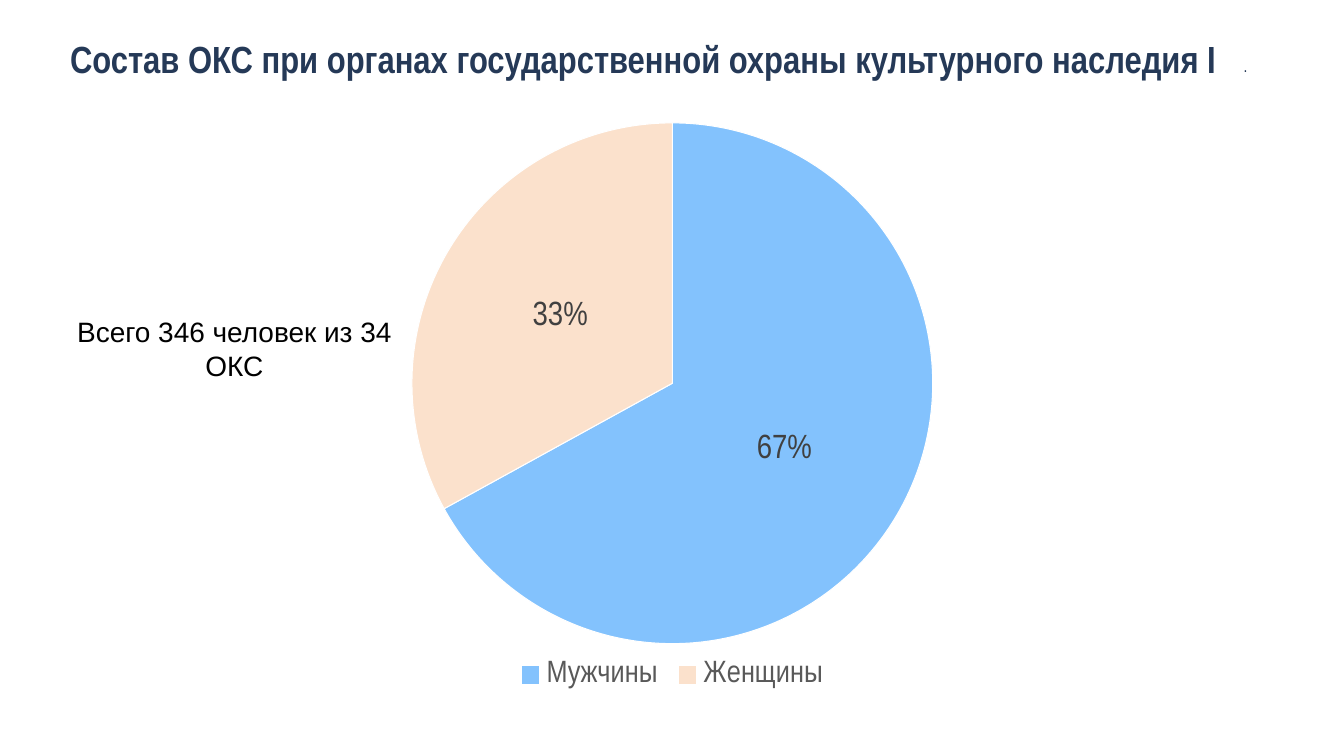
import pptx
import pptx.util
import pptx.chart.data
import pptx.dml.color
import pptx.enum.chart
import pptx.enum.text

Pt = pptx.util.Pt
ANCHOR = pptx.enum.text.MSO_ANCHOR
ALIGN = pptx.enum.text.PP_ALIGN

# Content
NARROW = "Arial Narrow"
NAVY = "253957"
TEXTS = [
    dict(text="Состав ОКС при органах государственной охраны культурного наследия I",
         box=(94.3, 46.8, 1784.2, 147.6), insets=(5.76, 0, 5.76, 91),
         size=54, font=NARROW, color=NAVY, bold=True,
         anchor=ANCHOR.BOTTOM, align=ALIGN.LEFT),
    dict(text=".",
         box=(892.8, 74.2, 895, 40.3), insets=(5.76, 5.76, 5.76, 5.76),
         size=24, font=NARROW, color=NAVY, bold=False,
         anchor=ANCHOR.MIDDLE, align=ALIGN.RIGHT),
    dict(text="Всего 346 человек из 34 ОКС",
         box=(95, 445.7, 479.5, 104.4), insets=(7.2, 3.6, 7.2, 3.6),
         size=40, font="Arial", color="000000", bold=False,
         anchor=ANCHOR.TOP, align=ALIGN.CENTER),
]
CHART_BOX = (328.3, 165.6, 1264.3, 828)
SLICES = [("Мужчины", 67, "83C2FD"), ("Женщины", 33, "FBE1CC")]


def rgb(value):
    return pptx.dml.color.RGBColor.from_string(value)


def set_font(font, name, size, color, bold=False):
    font.name, font.size, font.bold = name, Pt(size), bold
    font.color.rgb = rgb(color)


def add_text(slide, item):
    sp = slide.shapes.add_textbox(*map(Pt, item["box"]))
    tf = sp.text_frame
    tf.word_wrap = True
    tf.vertical_anchor = item["anchor"]
    tf.margin_left, tf.margin_top, tf.margin_right, tf.margin_bottom = map(Pt, item["insets"])
    tf.text = item["text"]
    p = tf.paragraphs[0]
    p.alignment = item["align"]
    set_font(p.runs[0].font, item["font"], item["size"], item["color"], item["bold"])


def add_pie(slide):
    data = pptx.chart.data.CategoryChartData()
    data.categories = [name for name, _, _ in SLICES]
    data.add_series("Series 1", [value for _, value, _ in SLICES])
    chart = slide.shapes.add_chart(
        pptx.enum.chart.XL_CHART_TYPE.PIE, *map(Pt, CHART_BOX), data).chart
    set_font(chart.font, NARROW, 10, "000000")
    chart.has_title = False

    # Legend
    chart.has_legend = True
    chart.legend.position = pptx.enum.chart.XL_LEGEND_POSITION.BOTTOM
    chart.legend.include_in_layout = False
    set_font(chart.legend.font, NARROW, 44, "595959")

    # Slices and percentages
    plot = chart.plots[0]
    plot.vary_by_categories = True
    series = plot.series[0]
    for i, (_, _, color) in enumerate(SLICES):
        fmt = series.points[i].format
        fmt.fill.solid()
        fmt.fill.fore_color.rgb = rgb(color)
        fmt.line.color.rgb = rgb("FFFFFF")
        fmt.line.width = Pt(1.5)
    labels = series.data_labels
    labels.show_percentage = True
    labels.show_value = False
    labels.number_format = "0%"
    labels.number_format_is_linked = False
    labels.position = pptx.enum.chart.XL_LABEL_POSITION.CENTER
    set_font(labels.font, NARROW, 48, "404040")


def main():
    prs = pptx.Presentation()
    prs.slide_width, prs.slide_height = Pt(1920), Pt(1080)
    slide = prs.slides.add_slide(prs.slide_layouts[6])
    title, dot, total = TEXTS
    add_text(slide, title)
    add_text(slide, dot)
    add_pie(slide)
    add_text(slide, total)
    prs.save("out.pptx")


if __name__ == "__main__":
    main()
